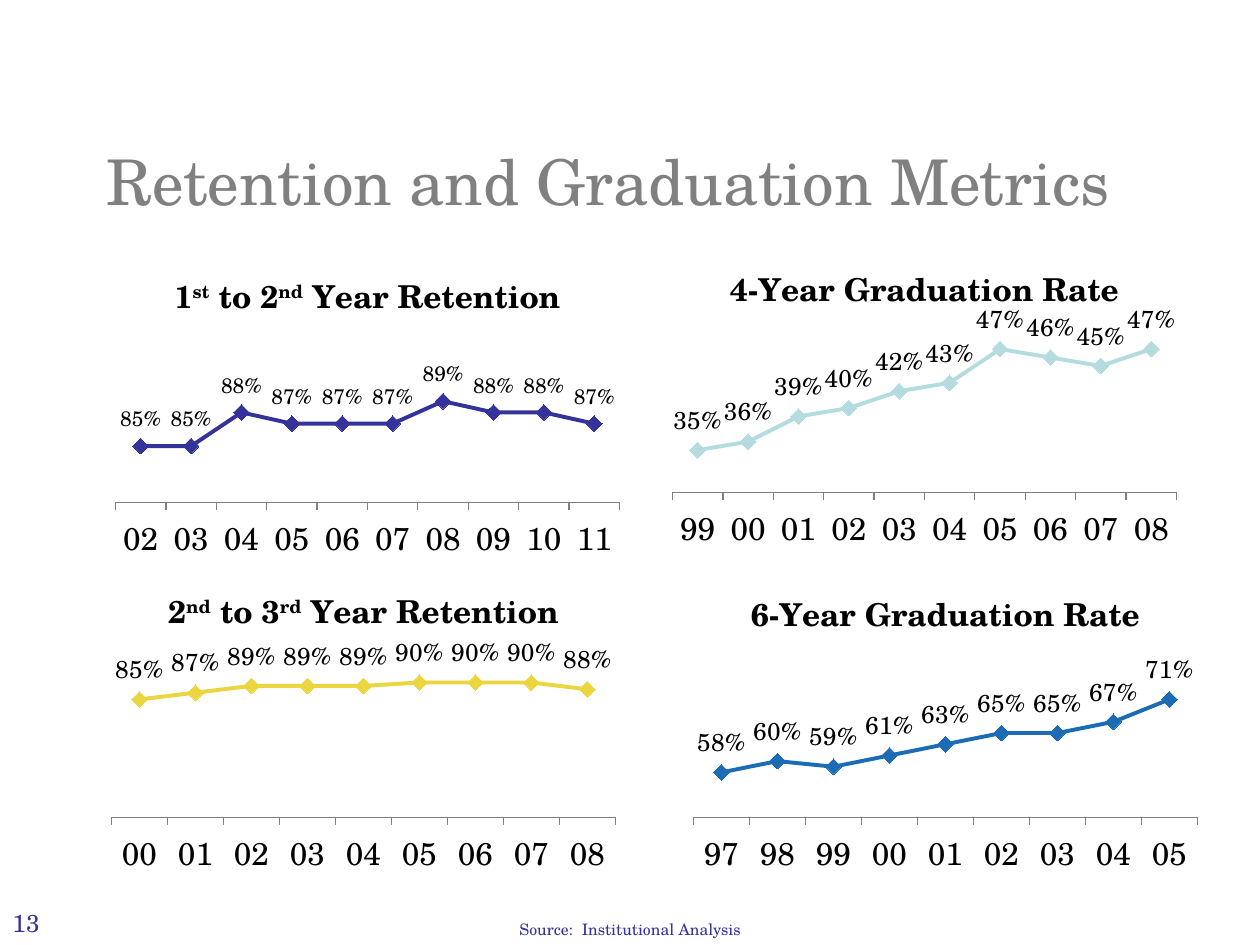
import pptx
import pptx.chart.data
import pptx.dml.color
import pptx.enum.chart
import pptx.enum.text
import pptx.util

EMU_PER_PX = 914400 / 126
FONT = "TeX Gyre Schola"
BLACK, GRAY, NAVY = "000000", "808080", "333399"
CHART_W, CHART_H = 525, 315
PLOT = {"x": 0.02, "y": 0.26, "w": 0.96, "h": 0.535}  # shares of the chart area


def px(n):
    return pptx.util.Emu(round(n * EMU_PER_PX))


def rgb(color):
    return pptx.dml.color.RGBColor.from_string(color)


def style_font(font, size, color=BLACK, bold=False):
    font.name, font.size, font.bold = FONT, pptx.util.Pt(size), bold
    font.color.rgb = rgb(color)


def add_text(p, text, superscript=False, **style):
    r = p.add_run()
    r.text = text
    style_font(r.font, **style)
    if superscript:
        r._r.get_or_add_rPr().set("baseline", "30000")


def set_plot_area(chart):
    """Fix the inner plot area, which has no public setter."""
    plot_area = chart._chartSpace.chart.plotArea
    for old in plot_area.findall(pptx.oxml.ns.qn("c:layout")):
        plot_area.remove(old)
    modes = '<c:layoutTarget val="inner"/><c:xMode val="edge"/><c:yMode val="edge"/>'
    sizes = "".join(f'<c:{k} val="{v}"/>' for k, v in PLOT.items())
    plot_area.insert(0, pptx.oxml.parse_xml(
        f'<c:layout {pptx.oxml.ns.nsdecls("c")}><c:manualLayout>{modes}{sizes}'
        "</c:manualLayout></c:layout>"))


class Deck:
    def __init__(self):
        self.prs = pptx.Presentation()
        self.prs.slide_width, self.prs.slide_height = px(1260), px(945)
        self.s = self.prs.slides.add_slide(self.prs.slide_layouts[5])

    def title(self, text, x, y, w, h):
        sp = self.s.shapes.title
        sp.left, sp.top, sp.width, sp.height = px(x), px(y), px(w), px(h)
        tf = sp.text_frame
        tf.auto_size = pptx.enum.text.MSO_AUTO_SIZE.NONE
        tf.vertical_anchor = pptx.enum.text.MSO_ANCHOR.TOP
        p = tf.paragraphs[0]
        p.alignment = pptx.enum.text.PP_ALIGN.LEFT
        add_text(p, text, size=36, color=GRAY)

    def text(self, text, x, y, w, h, align, **style):
        tf = self.s.shapes.add_textbox(px(x), px(y), px(w), px(h)).text_frame
        tf.word_wrap = True
        p = tf.paragraphs[0]
        p.alignment = align
        add_text(p, text, **style)

    def line_chart(self, x, y, title, first_year, percents, limits, color, label_size=14):
        """Draw a one-series line; a title part starting with ^ is superscript."""
        data = pptx.chart.data.CategoryChartData(number_format="0%")
        data.categories = [f"{(first_year + i) % 100:02d}" for i in range(len(percents))]
        data.add_series("Series 1", [v / 100 for v in percents])
        chart = self.s.shapes.add_chart(
            pptx.enum.chart.XL_CHART_TYPE.LINE_MARKERS,
            px(x), px(y), px(CHART_W), px(CHART_H), data).chart
        style_font(chart.font, 18)
        chart.has_legend = False
        chart.has_title = True
        p = chart.chart_title.text_frame.paragraphs[0]
        for part in title:
            add_text(p, part.lstrip("^"), superscript=part.startswith("^"),
                     size=18, bold=True)
        chart.chart_title.include_in_layout = False
        set_plot_area(chart)

        values = chart.value_axis
        values.minimum_scale, values.maximum_scale = limits
        values.has_major_gridlines = False
        values.visible = False
        years = chart.category_axis
        years.major_tick_mark = pptx.enum.chart.XL_TICK_MARK.OUTSIDE
        years.format.line.color.rgb = rgb(GRAY)
        years.format.line.width = pptx.util.Pt(0.75)
        style_font(years.tick_labels.font, 18)

        plot = chart.plots[0]
        plot.vary_by_categories = False
        series = plot.series[0]
        series.smooth = False
        series.format.line.color.rgb = rgb(color)
        series.format.line.width = pptx.util.Pt(2.25)
        marker = series.marker
        marker.style = pptx.enum.chart.XL_MARKER_STYLE.DIAMOND
        marker.size = 9
        marker.format.fill.solid()
        marker.format.fill.fore_color.rgb = rgb(color)
        marker.format.line.color.rgb = rgb(color)
        labels = series.data_labels
        labels.show_value = True
        labels.number_format, labels.number_format_is_linked = "0%", False
        labels.position = pptx.enum.chart.XL_LABEL_POSITION.ABOVE
        style_font(labels.font, label_size)


def main():
    deck = Deck()
    align = pptx.enum.text.PP_ALIGN
    deck.text("13", 0, 902, 105, 43, align.LEFT, size=14, color=NAVY)
    deck.text("Source:  Institutional Analysis", 0, 914, 1260, 31, align.CENTER,
              size=9, color=NAVY)
    deck.title("Retention and Graduation Metrics", 94, 136, 1071, 158)
    deck.line_chart(101, 567, ["2", "^nd", " to 3", "^rd", " Year Retention"], 2000,
                    [85, 87, 89, 89, 89, 90, 90, 90, 88], (0.5, 1), "ECD63F")
    deck.line_chart(662, 242, ["4-Year Graduation Rate"], 1999,
                    [35, 36, 39, 40, 42, 43, 47, 46, 45, 47], (0.3, 0.5), "B4DCDF")
    deck.line_chart(683, 567, ["6-Year Graduation Rate"], 1997,
                    [58, 60, 59, 61, 63, 65, 65, 67, 71], (0.5, 0.8), "1C6CB5")
    deck.line_chart(105, 252, ["1", "^st", " to 2", "^nd", " Year Retention"], 2002,
                    [85, 85, 88, 87, 87, 87, 89, 88, 88, 87], (0.8, 0.95), NAVY,
                    label_size=12)
    deck.prs.save("out.pptx")


if __name__ == "__main__":
    main()
